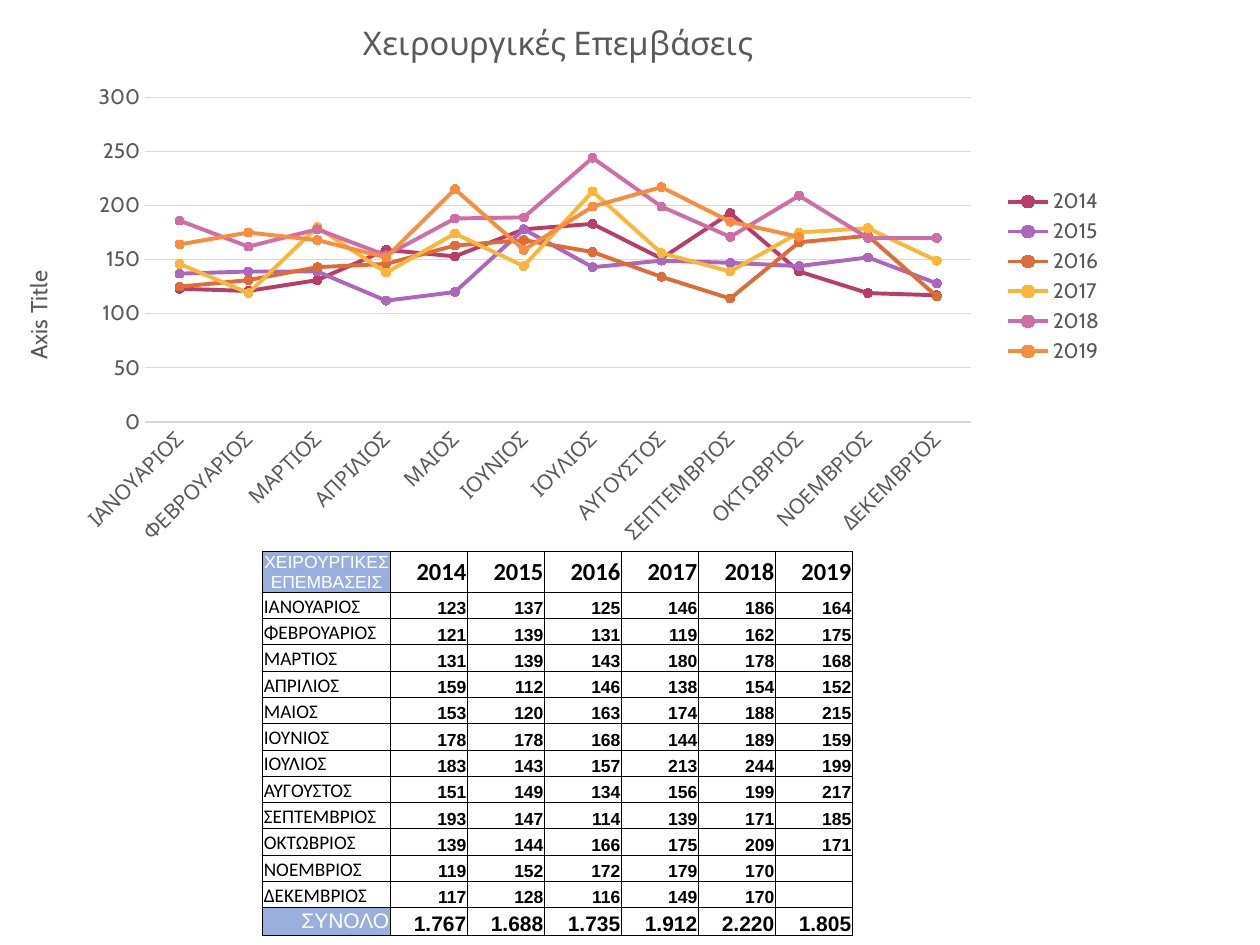
from lxml.etree import SubElement
from pptx import Presentation
from pptx.chart.data import CategoryChartData
from pptx.dml.color import RGBColor
from pptx.enum.chart import XL_CHART_TYPE, XL_LEGEND_POSITION, XL_MARKER_STYLE, XL_TICK_MARK
from pptx.enum.text import MSO_ANCHOR, PP_ALIGN
from pptx.oxml.ns import qn
from pptx.util import Pt

TITLE = "Χειρουργικές Επεμβάσεις"
AXIS = "Axis Title"
HEAD = "ΧΕΙΡΟΥΡΓΙΚΕΣ ΕΠΕΜΒΑΣΕΙΣ"
TOTAL = "ΣΥΝΟΛΟ"
MONTHS = ["ΙΑΝΟΥΑΡΙΟΣ", "ΦΕΒΡΟΥΑΡΙΟΣ", "ΜΑΡΤΙΟΣ", "ΑΠΡΙΛΙΟΣ", "ΜΑΙΟΣ", "ΙΟΥΝΙΟΣ",
          "ΙΟΥΛΙΟΣ", "ΑΥΓΟΥΣΤΟΣ", "ΣΕΠΤΕΜΒΡΙΟΣ", "ΟΚΤΩΒΡΙΟΣ", "ΝΟΕΜΒΡΙΟΣ", "ΔΕΚΕΜΒΡΙΟΣ"]
YEARS = {
    "2014": [123, 121, 131, 159, 153, 178, 183, 151, 193, 139, 119, 117],
    "2015": [137, 139, 139, 112, 120, 178, 143, 149, 147, 144, 152, 128],
    "2016": [125, 131, 143, 146, 163, 168, 157, 134, 114, 166, 172, 116],
    "2017": [146, 119, 180, 138, 174, 144, 213, 156, 139, 175, 179, 149],
    "2018": [186, 162, 178, 154, 188, 189, 244, 199, 171, 209, 170, 170],
    "2019": [164, 175, 168, 152, 215, 159, 199, 217, 185, 171, None, None],
}
COLORS = {
    "2014": "B83D68", "2015": "AC66BB", "2016": "DE6C36",
    "2017": "F9B639", "2018": "CF6DA4", "2019": "FA8D3D",
    "text": "595959", "grid": "D9D9D9", "head": "9BAFDE",
    "white": "FFFFFF", "black": "000000",
}
PLOT = {"x": 0.13, "y": 0.18, "w": 0.74, "h": 0.58}
SIDES = ("a:lnL", "a:lnR", "a:lnT", "a:lnB")


def color(name):
    """Return the named colour."""
    return RGBColor.from_string(COLORS[name])


def style(font, size, name="text", face="Cabin", bold=False):
    """Set the size, colour, face and weight of a font."""
    font.size, font.name, font.bold = Pt(size), face, bold
    font.color.rgb = color(name)


def label(frame, text, size):
    """Write a chart or axis title."""
    run = frame.paragraphs[0].add_run()
    run.text = text
    style(run.font, size)


def rule(line, name, width):
    """Colour a line and set its width."""
    line.color.rgb = color(name)
    line.width = Pt(width)


def place(chart):
    """Fix the inner plot area as shares of the chart."""
    area = chart._chartSpace.chart.plotArea
    for old in area.findall(qn("c:layout")):
        area.remove(old)
    layout = SubElement(area, qn("c:layout"))
    area.insert(0, layout)
    box = SubElement(layout, qn("c:manualLayout"))
    marks = {"layoutTarget": "inner", "xMode": "edge", "yMode": "edge", **PLOT}
    for key, val in marks.items():
        SubElement(box, qn(f"c:{key}")).set("val", str(val))


def draw_chart(slide):
    """Add the line chart of months by year."""
    data = CategoryChartData(number_format="#,##0")
    data.categories = MONTHS
    for year, vals in YEARS.items():
        data.add_series(year, vals)
    chart = slide.shapes.add_chart(XL_CHART_TYPE.LINE_MARKERS, Pt(0), Pt(-2),
                                   Pt(638), Pt(320), data).chart
    style(chart.font, 10, "black")
    label(chart.chart_title.text_frame, TITLE, 18.6)
    chart.chart_title.include_in_layout = False
    chart.has_legend = True
    chart.legend.position = XL_LEGEND_POSITION.RIGHT
    chart.legend.include_in_layout = False
    style(chart.legend.font, 12)

    cat, val = chart.category_axis, chart.value_axis
    for axis in (cat, val):
        axis.major_tick_mark = axis.minor_tick_mark = XL_TICK_MARK.NONE
        style(axis.tick_labels.font, 12)
    rule(cat.format.line, "grid", 0.75)
    cat._element.find(qn("c:txPr")).find(qn("a:bodyPr")).set("rot", "-2700000")
    val.format.line.fill.background()
    rule(val.major_gridlines.format.line, "grid", 0.75)
    val.minimum_scale, val.maximum_scale, val.major_unit = 0, 300, 50
    val.tick_labels.number_format = "#,##0"
    val.tick_labels.number_format_is_linked = False
    label(val.axis_title.text_frame, AXIS, 13.3)

    plot = chart.plots[0]
    plot.vary_by_categories = False
    for line in plot.series:
        line.smooth = False
        rule(line.format.line, line.name, 2.25)
        mark = line.marker
        mark.style, mark.size = XL_MARKER_STYLE.CIRCLE, 5
        mark.format.fill.solid()
        mark.format.fill.fore_color.rgb = color(line.name)
        rule(mark.format.line, line.name, 0.75)
    place(chart)


def border(cell):
    """Draw a thin black line on every side of a cell."""
    props = cell._tc.get_or_add_tcPr()
    for spot, side in enumerate(SIDES):
        line = SubElement(props, qn(side), w=str(Pt(0.5)))
        fill = SubElement(line, qn("a:solidFill"))
        SubElement(fill, qn("a:srgbClr"), val=COLORS["black"])
        props.insert(spot, line)


def fill_cell(cell, text, look, align, anchor, back=None):
    """Write and format one table cell."""
    cell.margin_left = cell.margin_right = cell.margin_top = Pt(0.75)
    cell.margin_bottom = Pt(0)
    cell.vertical_anchor = anchor
    if back:
        cell.fill.solid()
        cell.fill.fore_color.rgb = color(back)
    else:
        cell.fill.background()
    border(cell)
    para = cell.text_frame.paragraphs[0]
    para.alignment = align
    if text:
        run = para.add_run()
        run.text = text
        style(run.font, *look)
    else:
        SubElement(para._p, qn("a:endParaRPr"), sz=str(look[0] * 100))


def draw_table(slide):
    """Add the table of months, years and totals."""
    sums = [sum(v or 0 for v in vals) for vals in YEARS.values()]
    rows = [[HEAD, *YEARS]]
    rows += [[month, *(str(v or "") for v in vals)]
             for month, *vals in zip(MONTHS, *YEARS.values())]
    rows.append([TOTAL, *(f"{n:,}".replace(",", ".") for n in sums)])
    highs = [23.4] + [15.03] * len(MONTHS) + [16]
    wides = [73.2] + [44] * len(YEARS)
    table = slide.shapes.add_table(len(rows), len(wides), Pt(150), Pt(315),
                                   Pt(sum(wides)), Pt(sum(highs))).table
    table.first_row = table.horz_banding = False
    for col, wide in zip(table.columns, wides):
        col.width = Pt(wide)
    for row, high in zip(table.rows, highs):
        row.height = Pt(high)

    mid, low, top = MSO_ANCHOR.MIDDLE, MSO_ANCHOR.BOTTOM, MSO_ANCHOR.TOP
    left, right = PP_ALIGN.LEFT, PP_ALIGN.RIGHT
    first = ((10, "white", "Arial"), PP_ALIGN.CENTER, mid, "head")
    month = ((11, "black", "Calibri"), left, low)
    last = ((12, "white", "Arial"), right, top, "head")
    year = ((14, "black", "Calibri", True), right, mid)
    count = ((10, "black", "Arial", True), right, low)
    total = ((12, "black", "Arial", True), right, low)
    inner = len(MONTHS)
    names = [first] + [month] * inner + [last]
    nums = [year] + [count] * inner + [total]
    for r, row in enumerate(rows):
        for c, text in enumerate(row):
            fill_cell(table.cell(r, c), text, *(nums if c else names)[r])


def main():
    """Build and save the slide."""
    deck = Presentation()
    deck.slide_width, deck.slide_height = Pt(720), Pt(540)
    slide = deck.slides.add_slide(deck.slide_layouts[6])
    draw_table(slide)
    draw_chart(slide)
    deck.save("out.pptx")


if __name__ == "__main__":
    main()
